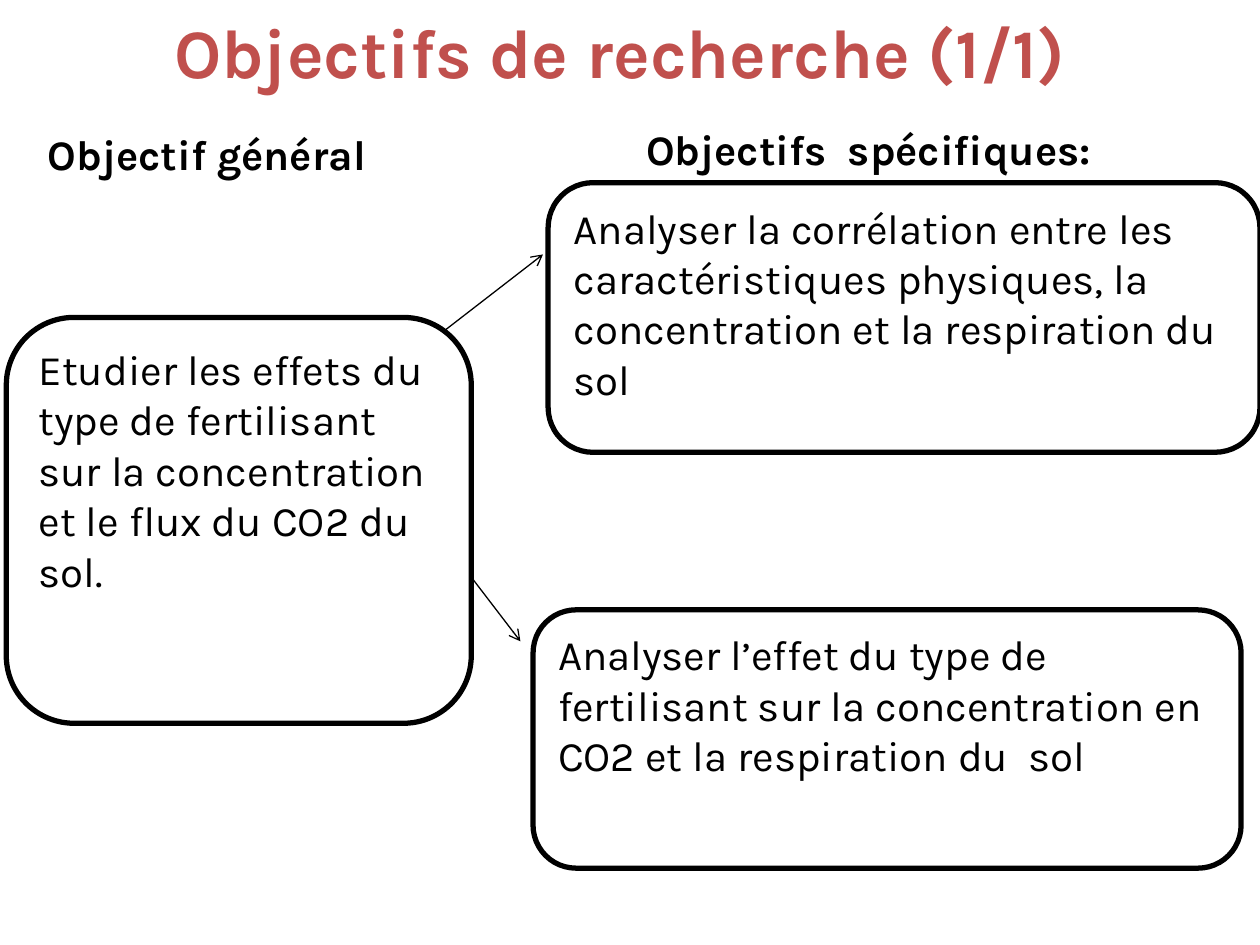
from dataclasses import dataclass

from lxml.etree import SubElement
from pptx import Presentation
from pptx.dml.color import RGBColor
from pptx.enum.shapes import MSO_CONNECTOR, MSO_SHAPE
from pptx.enum.text import MSO_ANCHOR, MSO_AUTO_SIZE, PP_ALIGN
from pptx.oxml.ns import qn
from pptx.util import Pt


@dataclass(frozen=True)
class Theme:
    font: str = "Karla"
    title_size: float = 39.6
    text_size: float = 24
    accent: RGBColor = RGBColor(0xC0, 0x50, 0x4D)
    ink: RGBColor = RGBColor(0, 0, 0)
    paper: RGBColor = RGBColor(0xFF, 0xFF, 0xFF)
    border: float = 3
    arrow: float = 0.75


THEME = Theme()


def write(frame, text, size=THEME.text_size, color=THEME.ink, bold=False,
          align=PP_ALIGN.LEFT, anchor=MSO_ANCHOR.TOP, wrap=True, after=0):
    """Put one formatted paragraph in a text frame."""
    frame.word_wrap = wrap
    frame.vertical_anchor = anchor
    para = frame.paragraphs[0]
    para.alignment = align
    para.space_after = Pt(after)
    span = para.add_run()
    span.text = text
    span.font.name = THEME.font
    span.font.size = Pt(size)
    span.font.bold = bold
    span.font.color.rgb = color


def points(*lengths):
    return [Pt(length) for length in lengths]


def add_title(page, box, text):
    title = page.shapes.title
    title.left, title.top, title.width, title.height = points(*box)
    title.text_frame.auto_size = MSO_AUTO_SIZE.NONE
    write(title.text_frame, text, size=THEME.title_size, color=THEME.accent,
          bold=True, align=PP_ALIGN.CENTER, anchor=MSO_ANCHOR.MIDDLE)


def add_heading(page, box, text):
    heading = page.shapes.add_textbox(*points(*box))
    write(heading.text_frame, text, bold=True, wrap=False)
    heading.text_frame.auto_size = MSO_AUTO_SIZE.SHAPE_TO_FIT_TEXT


def add_objective(page, box, text, after=0):
    card = page.shapes.add_shape(MSO_SHAPE.ROUNDED_RECTANGLE, *points(*box))
    card.shadow.inherit = False
    card.fill.solid()
    card.fill.fore_color.rgb = THEME.paper
    card.line.color.rgb = THEME.ink
    card.line.width = Pt(THEME.border)
    write(card.text_frame, text, after=after)


def add_arrow(page, start, end):
    arrow = page.shapes.add_connector(MSO_CONNECTOR.STRAIGHT, *points(*start, *end))
    arrow.line.color.rgb = THEME.ink
    arrow.line.width = Pt(THEME.arrow)
    SubElement(arrow.line._get_or_add_ln(), qn("a:tailEnd"), type="arrow")
    SubElement(arrow._element.spPr, qn("a:effectLst"))


def add_general(page, box):
    """General objective: heading above, one tall card below."""
    left, top, width, height = box
    add_heading(page, (left + 16.6, top, 203, 36), "Objectif général")
    add_objective(page, (left, top + 111.6, width, height - 111.6),
                  "Etudier les effets du type de fertilisant sur la "
                  "concentration et le flux du CO2 du sol.")


def add_specific(page, box):
    """Specific objectives: heading above two stacked cards."""
    left, top, width, height = box
    add_heading(page, (left + 57.6, top, 268.6, 36), "Objectifs  spécifiques:")
    add_objective(page, (left + 8.6, top + 37.4, width - 8.6, 154.1),
                  "Analyser la corrélation entre les caractéristiques "
                  "physiques, la concentration et la respiration du sol")
    add_objective(page, (left, top + height - 147.6, width - 10.8, 147.6),
                  "Analyser l’effet du type de fertilisant sur la "
                  "concentration en CO2 et la respiration du  sol", after=12)


def main():
    deck = Presentation()
    deck.slide_width, deck.slide_height = points(720, 540)
    page = deck.slides.add_slide(deck.slide_layouts.get_by_name("Title Only"))

    add_title(page, (48.2, 9.4, 612, 39.6), "Objectifs de recherche (1/1)")
    add_general(page, (3.6, 69.8, 265.7, 343.5))
    add_specific(page, (304.6, 67, 415.4, 429.1))

    # Links from the general objective to the specific ones
    add_arrow(page, (253.4, 189.4), (310.3, 145.4))
    add_arrow(page, (269.3, 329.8), (297.4, 366.5))

    deck.save("out.pptx")


if __name__ == "__main__":
    main()
